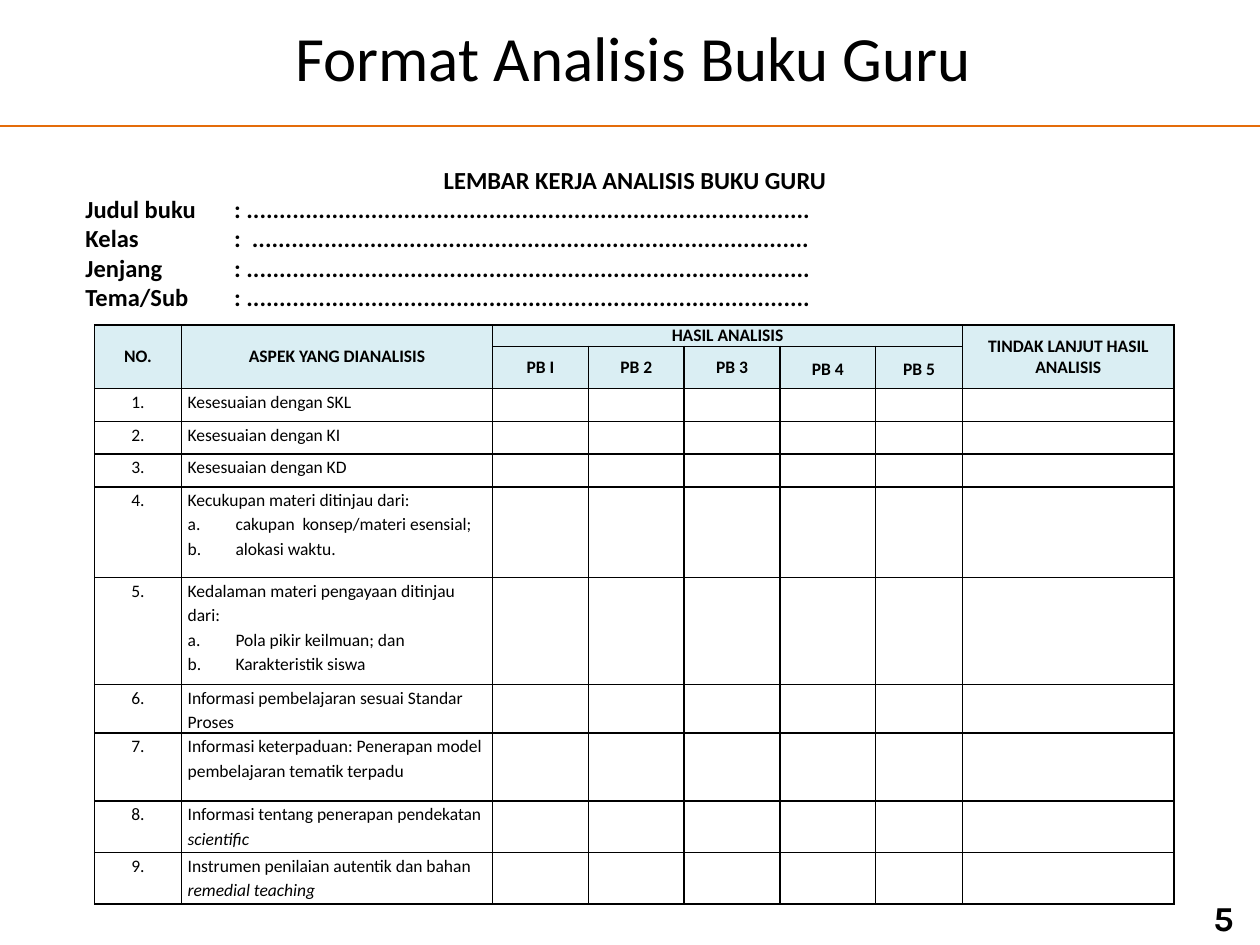
from lxml.etree import SubElement as Sub
from pptx import Presentation
from pptx.dml.color import RGBColor
from pptx.enum.shapes import MSO_CONNECTOR as Conn
from pptx.enum.text import MSO_ANCHOR as Anchor, PP_ALIGN as Align
from pptx.oxml.ns import qn
from pptx.util import Inches, Pt


def color(code):
    return RGBColor.from_string(code)


def style(para, size, bold=False, face="Calibri", align=Align.LEFT):
    para.alignment = align
    font = para.font
    font.name, font.size, font.bold = face, Pt(size), bold
    font.color.rgb = color("000000")


deck = Presentation()
deck.slide_width, deck.slide_height = Inches(10), Inches(7.5)
slide = deck.slides.add_slide(deck.slide_layouts[6])
shapes = slide.shapes

rule = shapes.add_connector(Conn.STRAIGHT, 0, Inches(1), Inches(10.05), Inches(1))
rule.line.color.rgb = color("E46C0A")
rule.line.width = Pt(1.5)
Sub(rule._element.spPr, qn("a:effectLst"))

fields = [("Judul buku", " " + "." * 86), ("Kelas", "  " + "." * 85),
          ("Jenjang", " " + "." * 86), ("Tema/Sub", " " + "." * 86)]
form = ["LEMBAR KERJA ANALISIS BUKU GURU"] + [f"{name}\t:{dots}" for name, dots in fields]
boxes = [
    ((0.83, 0.11, 8.39, 0.67), ["Format Analisis Buku Guru"], 36, False, "Calibri"),
    ((9.3, 7.08, 0.82, 0.4), ["5"], 20, True, "Karla"),
    ((0.58, 1.25, 8.92, 1.28), form, 14, True, "Calibri"),
]
for place, lines, size, bold, face in boxes:
    frame = shapes.add_textbox(*map(Inches, place)).text_frame
    frame.word_wrap = True
    frame.vertical_anchor = Anchor.MIDDLE
    frame.text = "\n".join(lines)
    for i, para in enumerate(frame.paragraphs):
        if i:
            tabs = Sub(para._p.get_or_add_pPr(), qn("a:tabLst"))
            Sub(tabs, qn("a:tab"), pos=str(Inches(1.18)), algn="l")
        style(para, size, bold, face, Align.LEFT if i else Align.CENTER)

widths = [0.69, 2.47, 0.76, 0.76, 0.76, 0.76, 0.69, 1.68]
heights = [0.17, 0.33, 0.26, 0.26, 0.26, 0.72, 0.85, 0.38, 0.54, 0.41, 0.41]
heads = [
    ["NO.", "ASPEK YANG DIANALISIS", "HASIL ANALISIS", "", "", "", "",
     "TINDAK LANJUT HASIL ANALISIS"],
    ["", "", "PB I", "PB 2", "PB 3", "PB 4", "PB 5", ""],
]
aspects = [
    ("Kesesuaian dengan SKL", [], ""),
    ("Kesesuaian dengan KI", [], ""),
    ("Kesesuaian dengan KD", [], ""),
    ("Kecukupan materi ditinjau dari:",
     ["cakupan  konsep/materi esensial;", "alokasi waktu."], ""),
    ("Kedalaman materi pengayaan ditinjau dari:",
     ["Pola pikir keilmuan; dan", "Karakteristik siswa"], ""),
    ("Informasi pembelajaran sesuai Standar Proses", [], ""),
    ("Informasi keterpaduan: Penerapan model pembelajaran tematik terpadu", [], ""),
    ("Informasi tentang penerapan pendekatan ", [], "scientific"),
    ("Instrumen penilaian autentik dan bahan ", [], "remedial teaching"),
]
rows = heads + [[f"{n}.", "\n".join([text] + items)] + [""] * 6
                for n, (text, items, term) in enumerate(aspects, 1)]

table = shapes.add_table(len(rows), len(widths), Inches(0.75), Inches(2.58),
                         Inches(sum(widths)), Inches(sum(heights))).table
table.first_row = table.horz_banding = False
for col, width in zip(table.columns, widths):
    col.width = Inches(width)
for row, height in zip(table.rows, heights):
    row.height = Inches(height)
for c in (0, 1, 7):
    table.cell(0, c).merge(table.cell(1, c))
table.cell(0, 2).merge(table.cell(0, 6))

for r, texts in enumerate(rows):
    head = r < len(heads)
    for c, text in enumerate(texts):
        cell = table.cell(r, c)
        cell.margin_left = cell.margin_right = Inches(0.05)
        cell.margin_top = cell.margin_bottom = 0
        cell.vertical_anchor = Anchor.MIDDLE if head else Anchor.TOP
        for side in ("lnL", "lnR", "lnT", "lnB"):
            line = Sub(cell._tc.get_or_add_tcPr(), qn(f"a:{side}"), w=str(Pt(1)))
            Sub(Sub(line, qn("a:solidFill")), qn("a:srgbClr"), val="000000")
        if head:
            cell.fill.solid()
            cell.fill.fore_color.rgb = color("DAEEF3")
        else:
            cell.fill.background()
        if not text:
            Sub(cell.text_frame.paragraphs[0]._p, qn("a:endParaRPr"), sz="1000")
            continue
        cell.text = text
        for i, para in enumerate(cell.text_frame.paragraphs):
            if i:
                props = para._p.get_or_add_pPr()
                props.set("marL", str(Inches(0.38)))
                props.set("indent", str(-Inches(0.38)))
                Sub(props, qn("a:buFont"), typeface="+mj-lt")
                Sub(props, qn("a:buAutoNum"), type="alphaLcPeriod")
            style(para, 10, head, align=Align.CENTER if head or c == 0 else Align.LEFT)
            if not head or text in ("PB 4", "PB 5"):
                para.line_spacing = 1.15
        if not head and c == 1 and aspects[r - 2][2]:
            run = para.add_run()
            run.text = aspects[r - 2][2]
            run.font.italic = True

deck.save("out.pptx")
